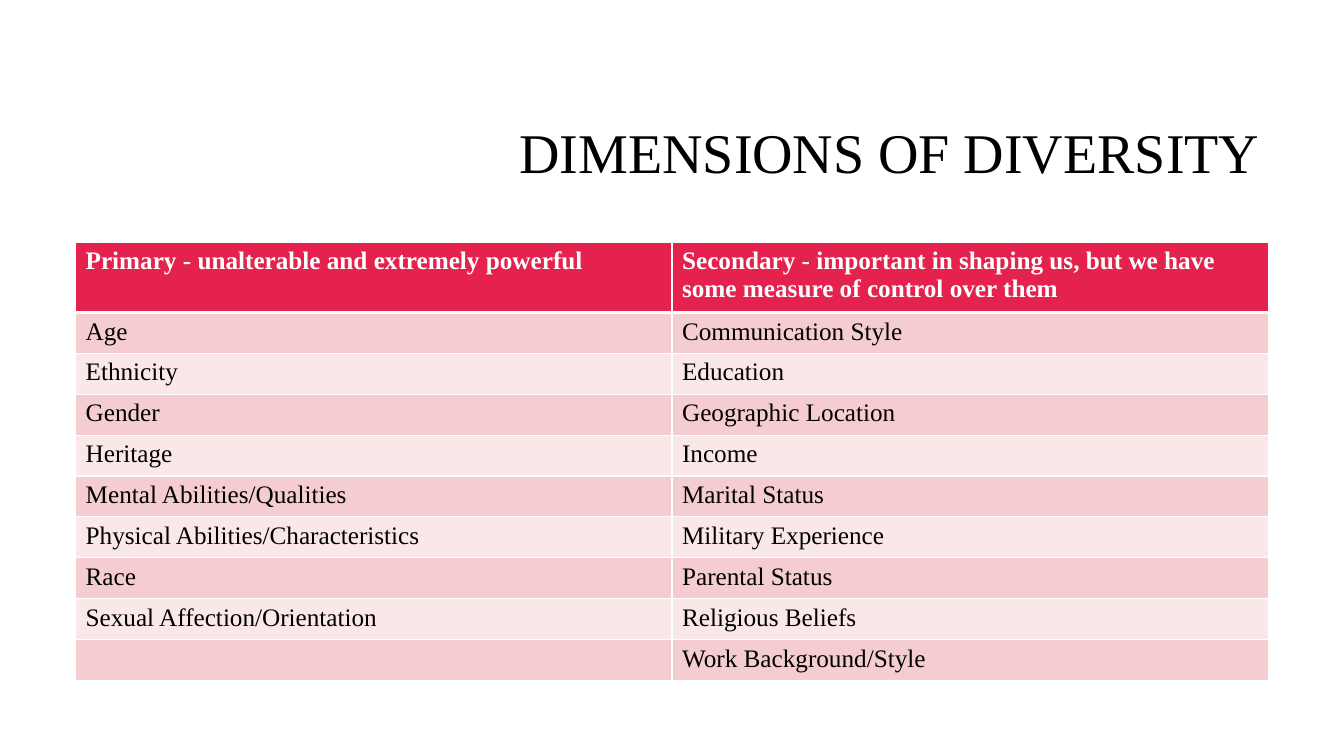
from lxml.etree import SubElement
from pptx import Presentation
from pptx.dml.color import RGBColor
from pptx.enum.text import MSO_ANCHOR, PP_ALIGN
from pptx.oxml.ns import qn
from pptx.util import Inches, Pt

BLACK = RGBColor(0x00, 0x00, 0x00)
WHITE = RGBColor(0xFF, 0xFF, 0xFF)
RED = RGBColor(0xE5, 0x22, 0x4E)
ROSE = RGBColor(0xF5, 0xCD, 0xD0)
PALE = RGBColor(0xFA, 0xE8, 0xE9)
FACE = "Times New Roman"

ROWS = [
    ("Primary - unalterable and extremely powerful",
     "Secondary - important in shaping us, but we have some measure of control over them"),
    ("Age", "Communication Style"),
    ("Ethnicity", "Education"),
    ("Gender", "Geographic Location"),
    ("Heritage", "Income"),
    ("Mental Abilities/Qualities", "Marital Status"),
    ("Physical Abilities/Characteristics", "Military Experience"),
    ("Race", "Parental Status"),
    ("Sexual Affection/Orientation", "Religious Beliefs"),
    ("", "Work Background/Style"),
]


def style(font, size, color, bold=False):
    font.name = FACE
    font.size = Pt(size)
    font.bold = bold
    font.color.rgb = color


def border(cell, side, width):
    line = SubElement(cell._tc.get_or_add_tcPr(), qn("a:ln" + side), w=str(Pt(width)))
    fill = SubElement(line, qn("a:solidFill"))
    SubElement(fill, qn("a:srgbClr"), val=str(WHITE))


deck = Presentation()
deck.slide_width = Inches(13.33)
deck.slide_height = Inches(7.5)
slide = deck.slides.add_slide(deck.slide_layouts[6])

title = slide.shapes.add_textbox(Inches(3.17), Inches(0.84), Inches(9.42), Inches(1.41))
frame = title.text_frame
frame.word_wrap = True
frame.vertical_anchor = MSO_ANCHOR.MIDDLE
frame.text = "DIMENSIONS OF DIVERSITY"
head = frame.paragraphs[0]
head.alignment = PP_ALIGN.RIGHT
head.line_spacing = 0.9
style(head.runs[0].font, 40, BLACK)

table = slide.shapes.add_table(
    len(ROWS), 2, Inches(0.75), Inches(2.4), Inches(11.83), Inches(4.3)).table
table.rows[0].height = Inches(0.65)
for row in list(table.rows)[1:]:
    row.height = Inches(3.65 / 9)

for r, words in enumerate(ROWS):
    top = r == 0
    for c, word in enumerate(words):
        cell = table.cell(r, c)
        for side in "LRTB":
            thick = (r, side) in ((0, "B"), (1, "T"))
            border(cell, side, 3 if thick else 1)
        cell.fill.solid()
        cell.fill.fore_color.rgb = RED if top else ROSE if r % 2 else PALE
        cell.text_frame.text = word
        for run in cell.text_frame.paragraphs[0].runs:
            style(run.font, 18, WHITE if top else BLACK, top)

deck.save("out.pptx")
